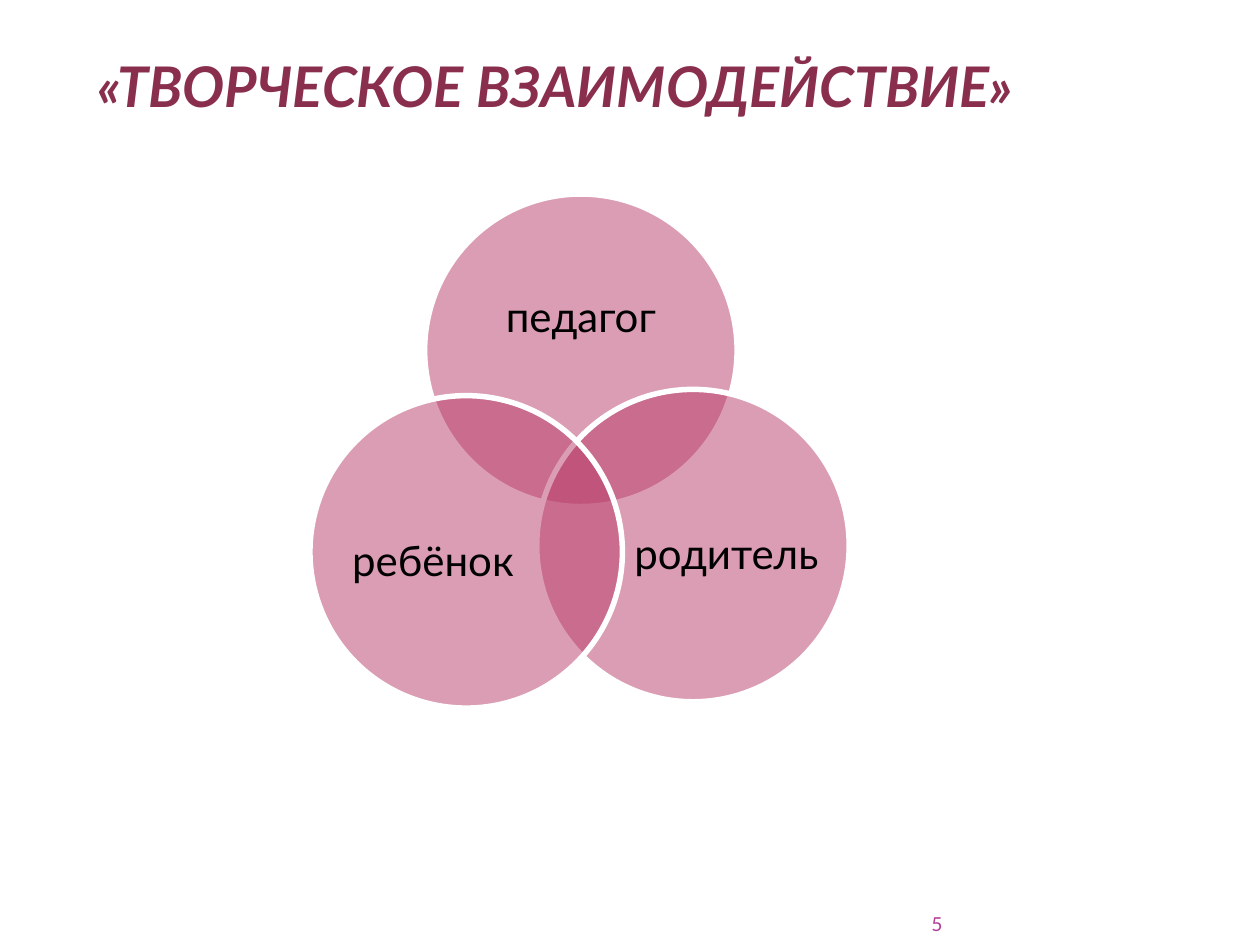
import pptx
import pptx.util
import pptx.dml.color
import pptx.enum.shapes
import pptx.enum.text
import pptx.oxml.ns
import lxml.etree

Inches = pptx.util.Inches
Align = pptx.enum.text.PP_ALIGN
Anchor = pptx.enum.text.MSO_ANCHOR


def color(value):
    """Turn a hex string into a colour."""
    return pptx.dml.color.RGBColor.from_string(value)


def add_text(page, box, text, size, ink, align=Align.CENTER, anchor=Anchor.MIDDLE, inset=0):
    """Place one line of text in a box and return its paragraph."""
    frame = page.shapes.add_textbox(*map(Inches, box)).text_frame
    frame.word_wrap = True
    frame.vertical_anchor = anchor
    frame.margin_left = frame.margin_right = Inches(inset)
    frame.margin_top = frame.margin_bottom = 0
    para = frame.paragraphs[0]
    para.text = text
    para.alignment = align
    para.font.name = "Lato"
    para.font.size = pptx.util.Pt(size)
    para.font.color.rgb = color(ink)
    return para


def add_title(page, box):
    """Place the bold italic heading."""
    para = add_text(page, box, "«ТВОРЧЕСКОЕ ВЗАИМОДЕЙСТВИЕ» ", 32, "8A2E4E",
                    anchor=Anchor.BOTTOM, inset=0.05)
    para.font.bold = para.font.italic = True


def add_circle(page, box):
    """Draw one half-transparent circle with a white outline."""
    circle = page.shapes.add_shape(pptx.enum.shapes.MSO_SHAPE.OVAL, *map(Inches, box))
    circle.shadow.inherit = False
    circle.fill.solid()
    circle.fill.fore_color.rgb = color("B83D68")
    circle.line.color.rgb = color("FFFFFF")
    circle.line.width = pptx.util.Pt(3.15)
    tint = circle.fill._xPr.find(".//" + pptx.oxml.ns.qn("a:srgbClr"))
    lxml.etree.SubElement(tint, pptx.oxml.ns.qn("a:alpha"), val="50000")


def add_venn(page, box):
    """Draw three overlapping circles, each with its label, inside a box."""
    left, top, diameter = box[0], box[1], 2.48
    side_label = (1.49, 1.37)
    members = [
        ("педагог", (0.91, 0), (0.33, 0.43), (1.82, 1.12)),
        ("родитель", (box[2] - diameter, 1.55), (0.76, 0.64), side_label),
        ("ребёнок", (0, box[3] - diameter), (0.23, 0.64), side_label),
    ]
    for name, (across, down), (indent, drop), label_size in members:
        x, y = left + across, top + down
        add_circle(page, (x, y, diameter, diameter))
        para = add_text(page, (x + indent, y + drop, *label_size), name, 24, "000000")
        para.line_spacing = 0.9


def add_page_number(page, box):
    """Place the page number at the right of its box."""
    add_text(page, box, "5", 11, "B13F9A", Align.RIGHT, Anchor.BOTTOM)


def main():
    """Build and save the deck."""
    deck = pptx.Presentation()
    deck.slide_width, deck.slide_height = Inches(10), Inches(7.5)
    page = deck.slides.add_slide(deck.slide_layouts[6])
    add_title(page, (0.5, 0.35, 7.92, 0.59))
    add_venn(page, (2.46, 1.54, 4.28, 4.08))
    add_page_number(page, (6.84, 7.17, 0.64, 0.25))
    deck.save("out.pptx")


if __name__ == "__main__":
    main()
